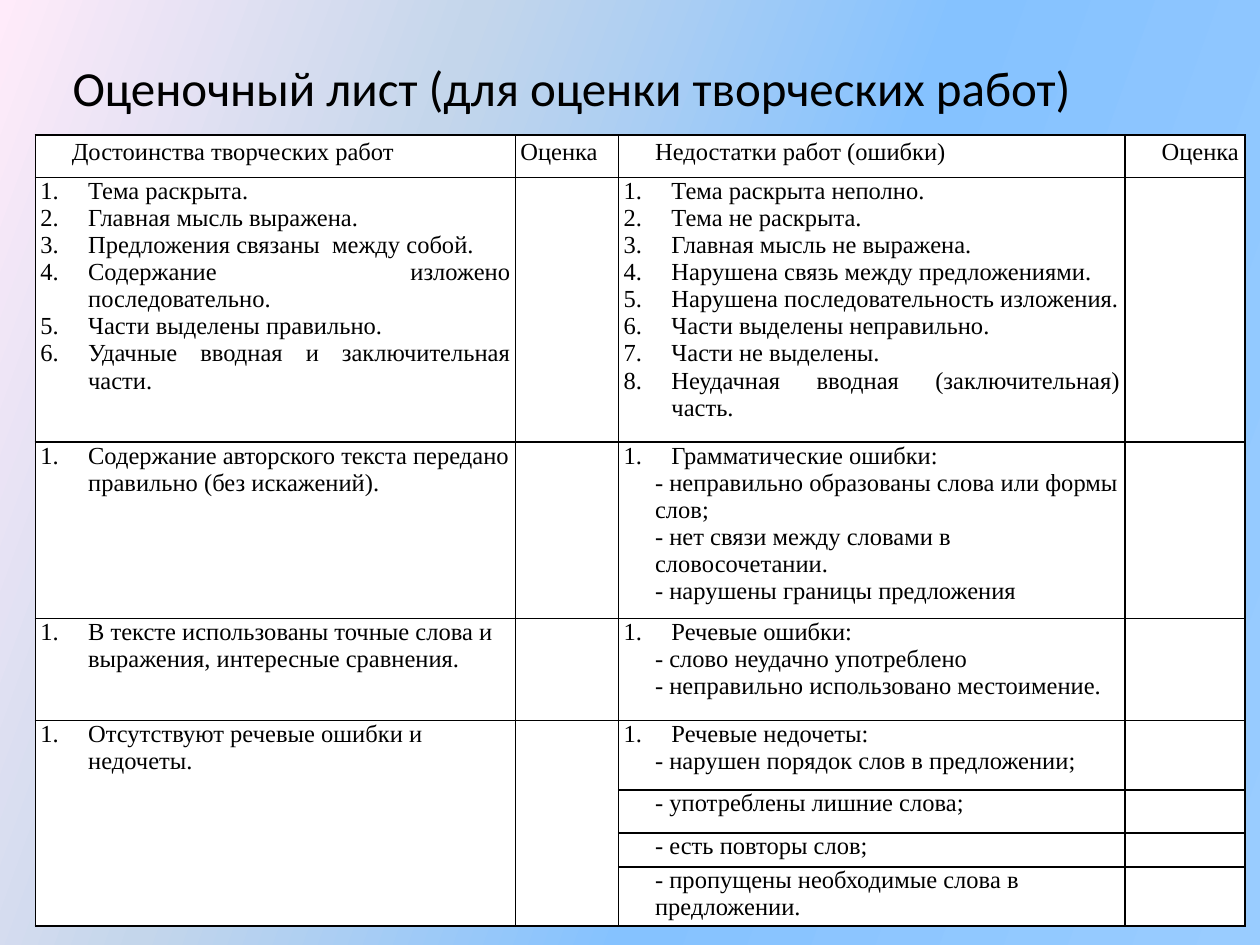
from lxml.etree import SubElement
from pptx import Presentation
from pptx.dml.color import RGBColor
from pptx.enum.text import MSO_ANCHOR, PP_ALIGN
from pptx.oxml import parse_xml
from pptx.oxml.ns import nsdecls, qn
from pptx.util import Inches, Pt

COLORS = {"ink": "000000", "paper": "FFFFFF", "sky": "99CCFF",
          "blue": "85C2FF", "mist": "C4D6EB", "pink": "FFEBFA"}
GRADIENT = [(0, "sky"), (40, "blue"), (70, "mist"), (100, "pink")]
COLUMN_WIDTHS = [3.81, 0.82, 4.02, 0.95]
ROW_HEIGHTS = [0.34, 2.1, 1.4, 0.81, 0.55, 0.34, 0.27, 0.47]
INDENTS = {"plain": (0, 0), "detail": (0.25, 0), "numbered": (0.38, -0.38)}


def lines(style, *texts):
    """Pair every text with the same paragraph style."""
    return [(style, text) for text in texts]


HEADINGS = [lines("detail", "Достоинства творческих работ"), lines("plain", "Оценка "),
            lines("detail", "Недостатки работ (ошибки)"), lines("detail", "Оценка")]
MERITS = [
    lines("numbered", "Тема раскрыта.", "Главная мысль выражена.",
          "Предложения связаны  между собой.", "Содержание изложено последовательно.",
          "Части выделены правильно.", "Удачные вводная и заключительная части."),
    lines("numbered", "Содержание авторского текста передано правильно (без искажений)."),
    lines("numbered", "В тексте использованы точные слова и выражения, интересные сравнения."),
    lines("numbered", "Отсутствуют речевые ошибки и недочеты."),
    [], [], [],
]
FAULTS = [
    lines("numbered", "Тема раскрыта неполно.", "Тема не раскрыта.",
          "Главная мысль не выражена.", "Нарушена связь между предложениями.",
          "Нарушена последовательность изложения.", "Части выделены неправильно.",
          "Части не выделены.", "Неудачная вводная (заключительная) часть."),
    lines("numbered", "Грамматические ошибки:")
    + lines("detail", "- неправильно образованы слова или формы слов;",
            "- нет связи между словами в словосочетании.",
            "- нарушены границы предложения"),
    lines("numbered", "Речевые ошибки:")
    + lines("detail", "- слово неудачно употреблено",
            "- неправильно использовано местоимение."),
    lines("numbered", "Речевые недочеты:")
    + lines("detail", "- нарушен порядок слов в предложении;"),
    lines("detail", "- употреблены лишние слова;"),
    lines("detail", "- есть повторы слов;"),
    lines("detail", "- пропущены необходимые слова в предложении."),
]
ROWS = [HEADINGS] + [[merit, [], fault, []] for merit, fault in zip(MERITS, FAULTS)]


def add_span(para, text, font, size):
    """Add one run of dark text to a paragraph."""
    span = para.add_run()
    span.text = text
    span.font.name = font
    span.font.size = Pt(size)
    span.font.color.rgb = RGBColor.from_string(COLORS["ink"])


def paint_background(page):
    """Fill the page background with the slanted pastel gradient."""
    fill = page.background.fill
    fill.gradient()
    fill.gradient_angle = 160
    stops = page.background._cSld.find(".//" + qn("a:gsLst"))
    for stop in list(stops):
        stops.remove(stop)
    for position, name in GRADIENT:
        stop = SubElement(stops, qn("a:gs"), pos=str(position * 1000))
        SubElement(stop, qn("a:srgbClr"), val=COLORS[name])


def add_title(page, left, top, width, height):
    """Place the centred slide title."""
    box = page.shapes.add_textbox(left, top, width, height)
    frame = box.text_frame
    frame.word_wrap = False
    frame.vertical_anchor = MSO_ANCHOR.MIDDLE
    para = frame.paragraphs[0]
    para.alignment = PP_ALIGN.CENTER
    add_span(para, "Оценочный лист (для оценки творческих работ)", "Calibri", 28)


def frame_cell(cell):
    """Give a cell thin borders, a white fill and narrow margins."""
    properties = cell._tc.get_or_add_tcPr()
    for side in ("lnL", "lnR", "lnT", "lnB"):
        properties.append(parse_xml(
            f'<a:{side} {nsdecls("a")} w="{Pt(1)}"><a:solidFill>'
            f'<a:srgbClr val="{COLORS["ink"]}"/></a:solidFill></a:{side}>'))
    cell.fill.solid()
    cell.fill.fore_color.rgb = RGBColor.from_string(COLORS["paper"])
    cell.margin_left = cell.margin_right = Inches(0.04)
    cell.margin_top = cell.margin_bottom = 0


def write_cell(cell, content, alignment, spacing):
    """Write styled paragraphs into a cell, or keep an empty one small."""
    frame = cell.text_frame
    if not content:
        SubElement(frame.paragraphs[0]._p, qn("a:endParaRPr"), sz="1400")
    for index, (style, text) in enumerate(content):
        para = frame.add_paragraph() if index else frame.paragraphs[0]
        para.alignment = alignment
        para.line_spacing = spacing
        margin, indent = INDENTS[style]
        properties = para._p.get_or_add_pPr()
        properties.set("marL", str(Inches(margin)))
        properties.set("indent", str(Inches(indent)))
        if style == "numbered":
            SubElement(properties, qn("a:buFont"), typeface="+mj-lt")
            SubElement(properties, qn("a:buAutoNum"), type="arabicPeriod")
        add_span(para, text, "Times New Roman", 14)


def add_score_table(page, left, top, width, height):
    """Place the table of merits, faults and scores."""
    table = page.shapes.add_table(
        len(ROW_HEIGHTS), len(COLUMN_WIDTHS), left, top, width, height).table
    table.first_row = table.horz_banding = False
    for column, size in zip(table.columns, COLUMN_WIDTHS):
        column.width = Inches(size)
    for row, size in zip(table.rows, ROW_HEIGHTS):
        row.height = Inches(size)
    for row_index, row in enumerate(ROWS):
        spacing = 1.15 if row_index == 0 else 1.0
        for column_index, content in enumerate(row):
            justified = row_index == 1 or (row_index == 0 and column_index < 3)
            alignment = PP_ALIGN.JUSTIFY if justified else PP_ALIGN.LEFT
            cell = table.cell(row_index, column_index)
            frame_cell(cell)
            write_cell(cell, content, alignment, spacing)
    for column_index in (0, 1):
        table.cell(4, column_index).merge(table.cell(7, column_index))


def main():
    """Build the deck and save it."""
    deck = Presentation()
    deck.slide_width, deck.slide_height = Inches(10), Inches(7.5)
    page = deck.slides.add_slide(deck.slide_layouts[6])
    paint_background(page)
    add_score_table(page, Inches(0.28), Inches(1.07), Inches(9.6), Inches(6.28))
    add_title(page, Inches(0.43), Inches(0.4), Inches(8.21), Inches(0.58))
    deck.save("out.pptx")


if __name__ == "__main__":
    main()
